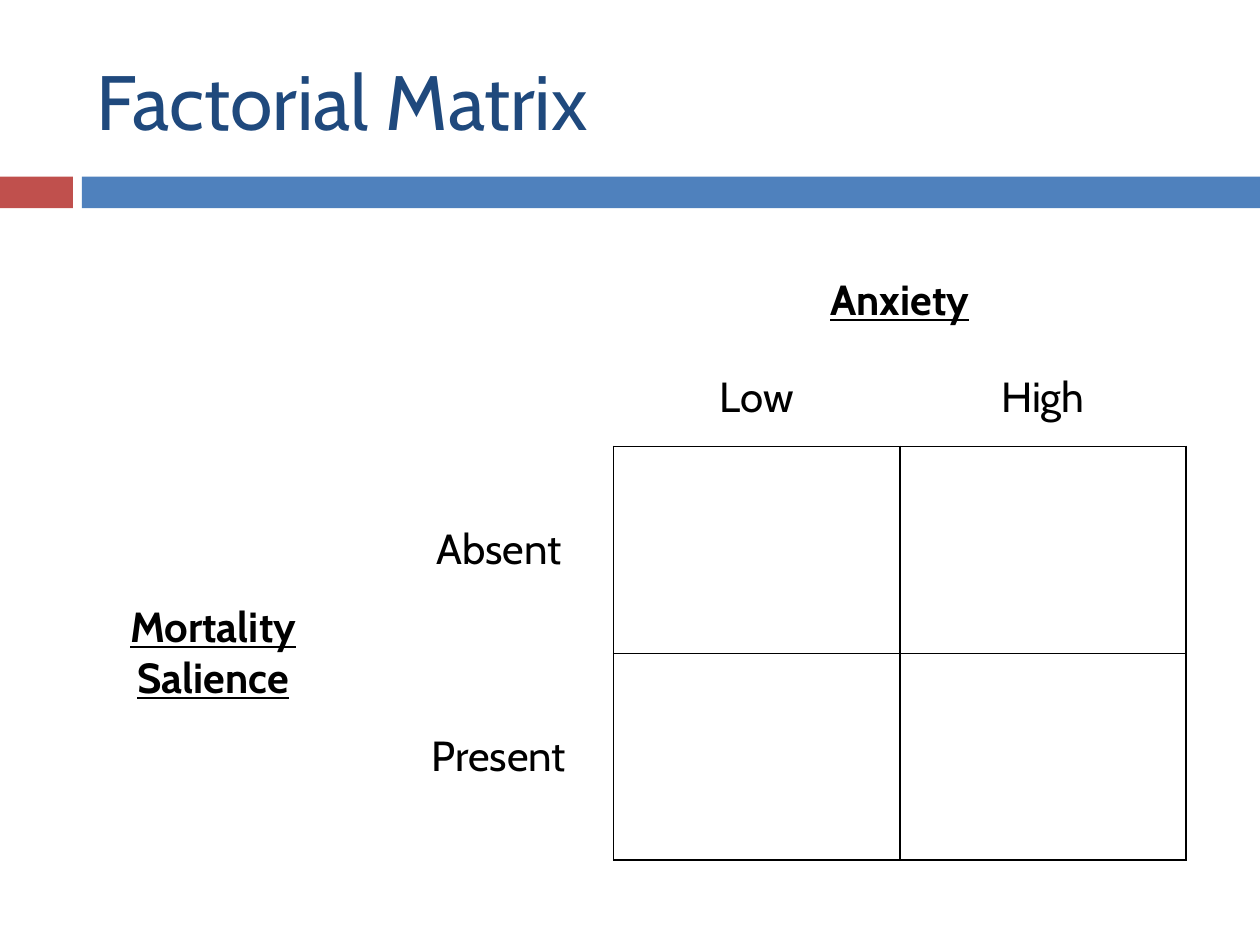
from lxml import etree
from pptx import Presentation, util as u
from pptx.dml.color import RGBColor
from pptx.enum import shapes, text
from pptx.oxml.ns import qn

FONT = "Cabin"
NAVY = RGBColor(0x1F, 0x49, 0x7D)
BLUE = RGBColor(0x4F, 0x81, 0xBD)
RED = RGBColor(0xC0, 0x50, 0x4D)
BLACK = RGBColor(0, 0, 0)

COLUMN_WIDTHS = [6.91, 4.62, 5.77, 5.77]
ROW_HEIGHTS = [1.96, 1.96, 4.17, 4.17]
FACTORS = {(0, 2): "Anxiety", (2, 0): "Mortality\nSalience"}
LEVELS = {(1, 2): "Low", (1, 3): "High", (2, 1): "Absent", (3, 1): "Present"}
SIDES = ["lnL", "lnR", "lnT", "lnB"]


def write(paragraph, wording, size, color, bold=False, underline=False):
    paragraph.text = wording
    for run in paragraph.runs:
        run.font.name = FONT
        run.font.size = u.Pt(size)
        run.font.color.rgb = color
        run.font.bold = bold
        run.font.underline = underline


def add_heading(slide, wording):
    heading = slide.shapes.add_textbox(u.Cm(1.7), u.Cm(0.64), u.Cm(22.65), u.Cm(2.75))
    frame = heading.text_frame
    frame.word_wrap = True
    frame.vertical_anchor = text.MSO_ANCHOR.MIDDLE
    write(frame.paragraphs[0], wording, 44, NAVY)


def add_band(slide, left, width, color):
    band = slide.shapes.add_shape(
        shapes.MSO_SHAPE.RECTANGLE, u.Cm(left), u.Cm(3.56), u.Cm(width), u.Cm(0.64))
    band.shadow.inherit = False
    band.fill.solid()
    band.fill.fore_color.rgb = color
    band.line.fill.background()


def add_borders(cell, sides):
    properties = cell._tc.get_or_add_tcPr()
    for position, side in enumerate(sides):
        line = etree.Element(qn(f"a:{side}"), w=str(u.Pt(1)))
        fill = etree.SubElement(line, qn("a:solidFill"))
        etree.SubElement(fill, qn("a:srgbClr"), val=str(BLACK))
        properties.insert(position, line)


def label_cell(cell, wording, factor):
    cell.vertical_anchor = text.MSO_ANCHOR.MIDDLE
    paragraph = cell.text_frame.paragraphs[0]
    paragraph.alignment = text.PP_ALIGN.CENTER
    write(paragraph, wording, 24, BLACK, bold=factor, underline=factor)


def add_matrix(slide):
    frame = slide.shapes.add_table(
        len(ROW_HEIGHTS), len(COLUMN_WIDTHS), u.Cm(0.84), u.Cm(5.08),
        u.Cm(sum(COLUMN_WIDTHS)), u.Cm(sum(ROW_HEIGHTS)))
    matrix = frame.table
    matrix.first_row = False
    matrix.horz_banding = False
    for column, width in zip(matrix.columns, COLUMN_WIDTHS):
        column.width = u.Cm(width)
    for row, height in zip(matrix.rows, ROW_HEIGHTS):
        row.height = u.Cm(height)
    for cell in matrix.iter_cells():
        cell.fill.background()

    matrix.cell(0, 2).merge(matrix.cell(0, 3))
    matrix.cell(2, 0).merge(matrix.cell(3, 0))
    for position, wording in FACTORS.items():
        label_cell(matrix.cell(*position), wording, True)
    for position, wording in LEVELS.items():
        label_cell(matrix.cell(*position), wording, False)

    for index in (2, 3):
        add_borders(matrix.cell(1, index), ["lnB"])
        add_borders(matrix.cell(index, 1), ["lnR"])
        for column in (2, 3):
            add_borders(matrix.cell(index, column), SIDES)


def main():
    deck = Presentation()
    deck.slide_width = u.Cm(25.4)
    deck.slide_height = u.Cm(19.05)
    slide = deck.slides.add_slide(deck.slide_layouts[6])
    add_band(slide, 0, 1.47, RED)
    add_band(slide, 1.65, 23.75, BLUE)
    add_heading(slide, "Factorial Matrix")
    add_matrix(slide)
    deck.save("out.pptx")


if __name__ == "__main__":
    main()
